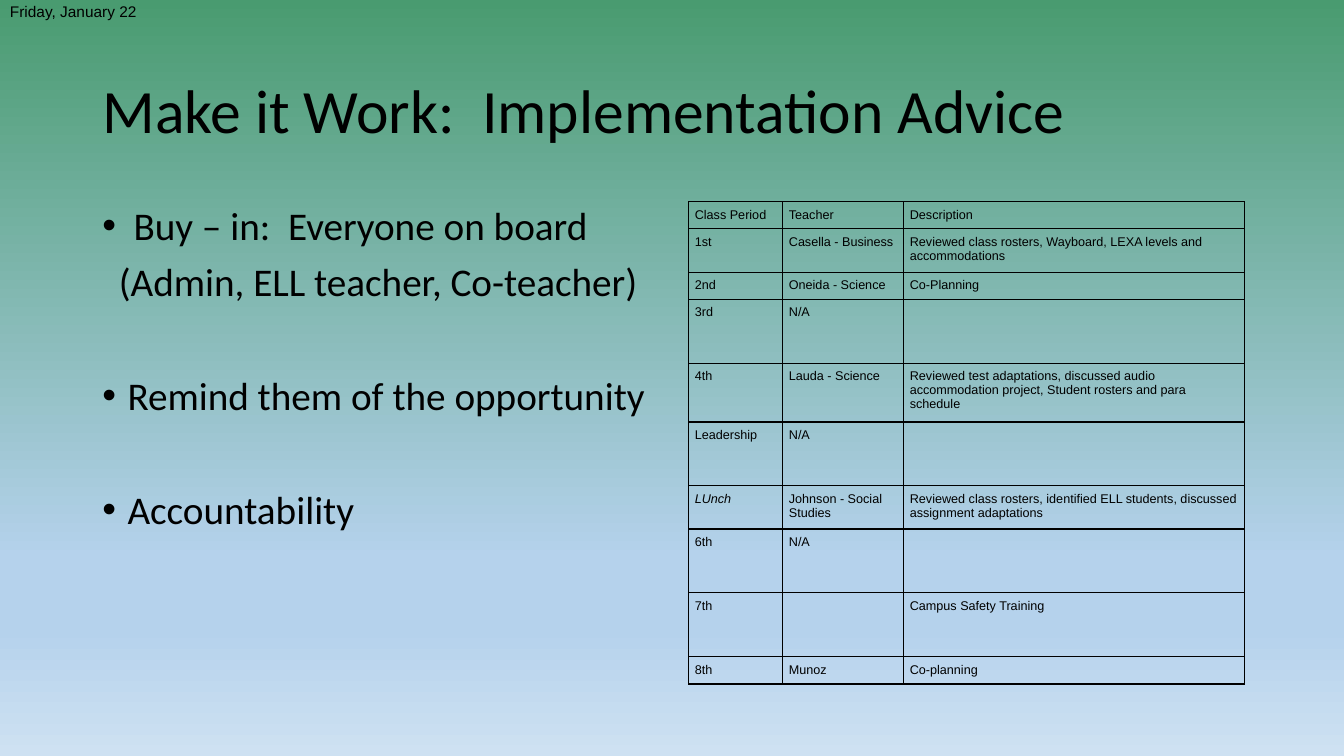
"""Build the implementation advice slide with its class schedule table."""
from dataclasses import dataclass
from typing import Any

from lxml.etree import SubElement
from pptx import Presentation
from pptx.dml.color import RGBColor
from pptx.enum.text import MSO_ANCHOR as Anchor
from pptx.enum.text import MSO_AUTO_SIZE as AutoSize
from pptx.enum.text import PP_ALIGN as Align
from pptx.oxml.ns import qn
from pptx.util import Emu, Inches, Pt

BLACK = RGBColor(0x00, 0x00, 0x00)
GREEN = RGBColor(0x49, 0x9B, 0x70)
SKY = RGBColor(0xB5, 0xD2, 0xEC)
PALE_SKY = RGBColor(0xCE, 0xE1, 0xF2)
BACKGROUND_STOPS = ((0, GREEN), (74, SKY), (83, SKY), (100, PALE_SKY))

SLIDE_WIDTH, SLIDE_HEIGHT = Inches(13.33), Inches(7.5)
GRID_COLUMNS, GRID_ROWS = 160, 90
TITLE_ONLY = 5
SCHEDULE_COLUMNS = (11.2, 14.4, 40.6)
ONE_LINE, TWO_LINES, THREE_LINES, OPEN = 3.25, 5.15, 7.0, 7.6
CELL_MARGIN = Inches(0.06)


@dataclass(frozen=True)
class Area:
    """A rectangle in grid columns and rows."""

    column: float
    row: float
    columns: float
    rows: float

    def box(self) -> tuple[Emu, Emu, Emu, Emu]:
        """Return left, top, width and height."""
        return across(self.column), down(self.row), across(self.columns), down(self.rows)


@dataclass(frozen=True)
class Advice:
    """One line of advice beside the schedule."""

    text: str
    indent: float = 0.25
    bullet: bool = True
    space_before: float = 10


@dataclass(frozen=True)
class Period:
    """One row of the class schedule."""

    name: str
    teacher: str
    description: str
    rows: float
    italic: bool = False


TITLE_AREA = Area(11, 4.8, 138, 17.4)
ADVICE_AREA = Area(11, 24, 68, 57)
SCHEDULE_AREA = Area(82, 24, 66, 57)
DATE_AREA = Area(0, 0, 160, 6)

ADVICE = (
    Advice("Buy – in:  Everyone on board", indent=0.31),
    Advice("(Admin, ELL teacher, Co-teacher)", bullet=False),
    Advice("Remind them of the opportunity", space_before=51),
    Advice("Accountability", space_before=51),
)

PERIODS = (
    Period("Class Period", "Teacher", "Description", ONE_LINE),
    Period("1st", "Casella - Business",
           "Reviewed class rosters, Wayboard, LEXA levels and accommodations", TWO_LINES),
    Period("2nd", "Oneida - Science", "Co-Planning", ONE_LINE),
    Period("3rd", "N/A", "", OPEN),
    Period("4th", "Lauda - Science",
           "Reviewed test adaptations, discussed audio accommodation project, "
           "Student rosters and para schedule", THREE_LINES),
    Period("Leadership", "N/A", "", OPEN),
    Period("LUnch", "Johnson - Social Studies",
           "Reviewed class rosters, identified ELL students, discussed assignment adaptations",
           TWO_LINES, italic=True),
    Period("6th", "N/A", "", OPEN),
    Period("7th", "", "Campus Safety Training", OPEN),
    Period("8th", "Munoz", "Co-planning", ONE_LINE),
)


def across(columns: float) -> Emu:
    """Convert grid columns to a length."""
    return Emu(round(SLIDE_WIDTH * columns / GRID_COLUMNS))


def down(rows: float) -> Emu:
    """Convert grid rows to a length."""
    return Emu(round(SLIDE_HEIGHT * rows / GRID_ROWS))


def set_font(paragraph: Any, name: str, size: float, italic: bool = False) -> None:
    """Format a whole paragraph in black."""
    font = paragraph.font
    font.name, font.size, font.italic, font.bold = name, Pt(size), italic, False
    font.color.rgb = BLACK


def paint_background(slide: Any) -> None:
    """Fill the slide with the vertical gradient."""
    fill = slide.background.fill
    fill.gradient()
    fill.gradient_angle = 270
    stops = next(slide.element.iter(qn("a:gsLst")))
    for stop in list(stops):
        stops.remove(stop)
    for position, color in BACKGROUND_STOPS:
        stop = SubElement(stops, qn("a:gs"), pos=str(position * 1000))
        SubElement(stop, qn("a:srgbClr"), val=str(color))


def add_title(slide: Any, text: str) -> None:
    """Place and format the title placeholder."""
    title = slide.shapes.title
    title.left, title.top, title.width, title.height = TITLE_AREA.box()
    frame = title.text_frame
    frame.text = text
    frame.auto_size = AutoSize.NONE
    frame.vertical_anchor = Anchor.MIDDLE
    paragraph = frame.paragraphs[0]
    paragraph.alignment = Align.LEFT
    paragraph.line_spacing = 0.9
    set_font(paragraph, "Calibri", 44)


def add_text_frame(slide: Any, area: Area) -> Any:
    """Add a wrapping text box and return its frame."""
    frame = slide.shapes.add_textbox(*area.box()).text_frame
    frame.word_wrap = True
    return frame


def add_advice(slide: Any) -> None:
    """Write the advice list."""
    frame = add_text_frame(slide, ADVICE_AREA)
    for index, advice in enumerate(ADVICE):
        paragraph = frame.add_paragraph() if index else frame.paragraphs[0]
        paragraph.text = advice.text
        paragraph.line_spacing = 0.9
        paragraph.space_before = Pt(advice.space_before)
        set_font(paragraph, "Calibri", 28)
        if not advice.bullet:
            paragraph.alignment = Align.CENTER
            continue
        properties = paragraph._p.get_or_add_pPr()
        indent = Inches(advice.indent)
        properties.set("marL", str(indent))
        properties.set("indent", str(-indent))
        bullet_font = properties.makeelement(qn("a:buFont"), {"typeface": "Arial"})
        bullet = properties.makeelement(qn("a:buChar"), {"char": "•"})
        defaults = properties.find(qn("a:defRPr"))
        defaults.addprevious(bullet_font)
        defaults.addprevious(bullet)


def add_borders(cell: Any) -> None:
    """Draw a thin black line on each side of a cell."""
    properties = cell._tc.get_or_add_tcPr()
    for side in ("a:lnL", "a:lnR", "a:lnT", "a:lnB"):
        line = SubElement(properties, qn(side), w=str(Pt(1)))
        SubElement(SubElement(line, qn("a:solidFill")), qn("a:srgbClr"), val=str(BLACK))


def add_schedule(slide: Any) -> None:
    """Draw the class schedule table."""
    table = slide.shapes.add_table(
        len(PERIODS), len(SCHEDULE_COLUMNS), *SCHEDULE_AREA.box()).table
    table.first_row = table.horz_banding = False
    for column, columns in zip(table.columns, SCHEDULE_COLUMNS):
        column.width = across(columns)
    for row, period in zip(table.rows, PERIODS):
        row.height = down(period.rows)
        texts = (period.name, period.teacher, period.description)
        for index, (cell, text) in enumerate(zip(row.cells, texts)):
            cell.text = text
            cell.margin_left = cell.margin_right = CELL_MARGIN
            cell.margin_top = cell.margin_bottom = CELL_MARGIN
            set_font(cell.text_frame.paragraphs[0], "Arial", 9, period.italic and index == 0)
            add_borders(cell)
            cell.fill.background()


def add_date(slide: Any, text: str) -> None:
    """Write the date in the top left corner."""
    frame = add_text_frame(slide, DATE_AREA)
    frame.margin_top = Inches(0.02)
    frame.text = text
    set_font(frame.paragraphs[0], "Arial", 11)


def main() -> None:
    """Build and save the presentation."""
    presentation = Presentation()
    presentation.slide_width, presentation.slide_height = SLIDE_WIDTH, SLIDE_HEIGHT
    slide = presentation.slides.add_slide(presentation.slide_layouts[TITLE_ONLY])
    paint_background(slide)
    add_title(slide, "Make it Work:  Implementation Advice")
    add_advice(slide)
    add_schedule(slide)
    add_date(slide, "Friday, January 22")
    presentation.save("out.pptx")


if __name__ == "__main__":
    main()
